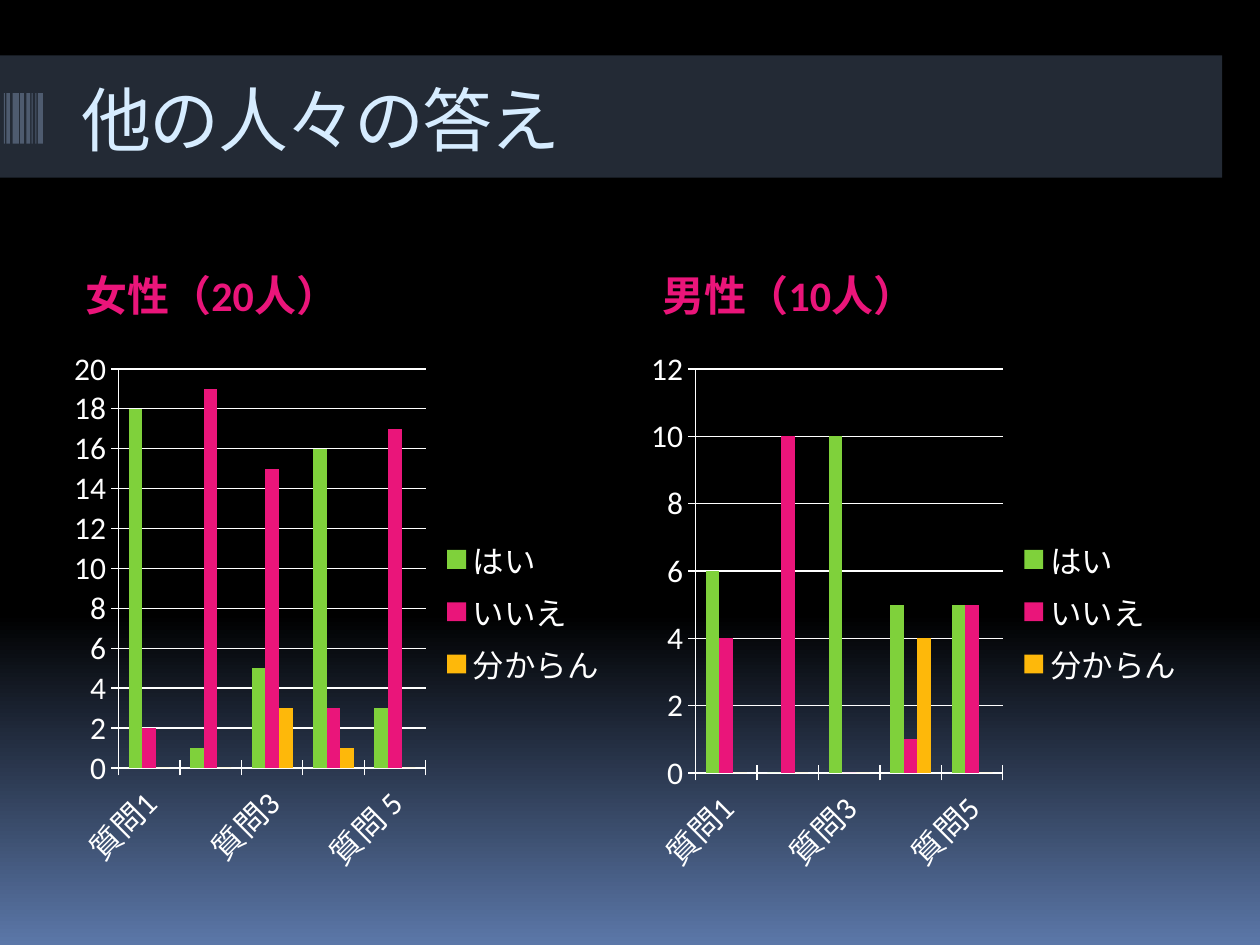
from collections import namedtuple

from lxml import etree
from pptx import Presentation
from pptx.chart.data import CategoryChartData
from pptx.dml.color import RGBColor
from pptx.enum.chart import XL_CHART_TYPE, XL_LEGEND_POSITION, XL_TICK_MARK
from pptx.enum.shapes import MSO_SHAPE
from pptx.enum.text import MSO_ANCHOR
from pptx.oxml.ns import qn
from pptx.util import Inches, Pt

COLUMNS = XL_CHART_TYPE.COLUMN_CLUSTERED
RIGHT = XL_LEGEND_POSITION.RIGHT
CROSS = XL_TICK_MARK.CROSS
RECTANGLE = MSO_SHAPE.RECTANGLE
TOP, MIDDLE = MSO_ANCHOR.TOP, MSO_ANCHOR.MIDDLE

Box = namedtuple("Box", "left top width height")
WIDTH, HEIGHT = 10, 7.5
MARGIN, GUTTER = 0.5, 0.16
COLUMN_WIDTH = (WIDTH - 2 * MARGIN - GUTTER) / 2
PANEL_TOP, PANEL_HEIGHT = 1.98, 5.04
HEADING_HEIGHT = 0.71

WHITE, PINK = "FFFFFF", "EA157A"
STRIPES = [(0.03, 0.01), (0.05, 0.03), (0.1, 0.05), (0.16, 0.03),
           (0.21, 0.03), (0.25, 0.01), (0.28, 0.01), (0.3, 0.04)]
ANSWERS = [("はい", "7FD13B"), ("いいえ", PINK), ("分からん", "FEB80A")]
QUESTIONS = ["質問1", "質問2", "質問3", "質問4"]
PANELS = [
    ("女性（20人）", QUESTIONS + ["質問 5"],
     [(18, 1, 5, 16, 3), (2, 19, 15, 3, 17), (0, 0, 3, 1, 0)]),
    ("男性（10人）", QUESTIONS + ["質問5"],
     [(6, 0, 10, 5, 5), (4, 10, 0, 1, 5), (0, 0, 0, 4, 0)]),
]


def color(value):
    """Turn a hex string into a colour."""
    return RGBColor.from_string(value)


def inches(box):
    """Turn a box in inches into slide lengths."""
    return [Inches(length) for length in box]


def style_font(font, name, size, hex_color, bold=False):
    """Set the face, size, colour and weight of a font."""
    font.name, font.size, font.bold = name, Pt(size), bold
    font.color.rgb = color(hex_color)


def add_background(slide):
    """Fade the background from black to blue at the bottom."""
    fill = slide.background.fill
    fill.gradient()
    fill.gradient_angle = 270
    for stop, position, value in zip(fill.gradient_stops, (0.65, 1), ("000000", "5B77A8")):
        stop.position = position
        stop.color.rgb = color(value)


def add_rectangle(slide, box, hex_color):
    """Add a plain filled rectangle."""
    shape = slide.shapes.add_shape(RECTANGLE, *inches(box))
    shape.shadow.inherit = False
    shape.fill.solid()
    shape.fill.fore_color.rgb = color(hex_color)
    shape.line.fill.background()
    return shape


def add_text(slide, box, text, anchor):
    """Add a wrapped one-paragraph text box and return its paragraph."""
    frame = slide.shapes.add_textbox(*inches(box)).text_frame
    frame.word_wrap = True
    frame.vertical_anchor = anchor
    paragraph = frame.paragraphs[0]
    paragraph.text = text
    return paragraph


def add_title_band(slide, box, title):
    """Add the translucent band with its stripes and the title."""
    band = add_rectangle(slide, box, "586A86")
    fill_color = band.fill._xPr.find(".//" + qn("a:srgbClr"))
    etree.SubElement(fill_color, qn("a:alpha"), val="40000")
    for left, width in STRIPES:
        add_rectangle(slide, Box(box.left + left, box.top + 0.3, width, 0.4), "4E5B6F")
    title_box = Box(box.left + 0.55, box.top + 0.12, 8.5, 1)
    paragraph = add_text(slide, title_box, title, TOP)
    style_font(paragraph.font, "Courier New", 40, "D6ECFF")
    paragraph.runs[0].font._element.set("spc", "-100")


def add_answer_chart(slide, box, categories, counts):
    """Add a clustered column chart of the answers to each question."""
    data = CategoryChartData()
    data.categories = categories
    for (answer, _), values in zip(ANSWERS, counts):
        data.add_series(answer, values)
    chart = slide.shapes.add_chart(COLUMNS, *inches(box), data).chart
    chart.has_title = False
    style_font(chart.font, "Calibri", 18, WHITE)
    chart.has_legend = True
    chart.legend.position = RIGHT
    chart.legend.include_in_layout = False
    plot = chart.plots[0]
    plot.gap_width, plot.vary_by_categories = 150, False
    for series, (_, hex_color) in zip(plot.series, ANSWERS):
        series.format.fill.solid()
        series.format.fill.fore_color.rgb = color(hex_color)
    chart.value_axis.has_major_gridlines = True
    lines = [chart.value_axis.major_gridlines.format.line]
    for axis in (chart.category_axis, chart.value_axis):
        axis.major_tick_mark = CROSS
        lines.append(axis.format.line)
    for line in lines:
        line.color.rgb = color(WHITE)
        line.width = Pt(0.75)


def add_panel(slide, box, heading, categories, counts):
    """Add one group's heading with its chart below."""
    heading_box = box._replace(height=HEADING_HEIGHT)
    paragraph = add_text(slide, heading_box, heading, MIDDLE)
    paragraph.space_before = Pt(7)
    paragraph._p.get_or_add_pPr().set("marL", str(Inches(0.08)))
    style_font(paragraph.font, "Calibri", 24, PINK, bold=True)
    chart_box = box._replace(top=box.top + HEADING_HEIGHT, height=box.height - HEADING_HEIGHT)
    add_answer_chart(slide, chart_box, categories, counts)


def main():
    """Build and save the slide."""
    presentation = Presentation()
    presentation.slide_width, presentation.slide_height = Inches(WIDTH), Inches(HEIGHT)
    slide = presentation.slides.add_slide(presentation.slide_layouts[6])
    add_background(slide)
    add_title_band(slide, Box(0, 0.44, 9.7, 0.97), "他の人々の答え")
    for index, panel in enumerate(PANELS):
        left = MARGIN + index * (COLUMN_WIDTH + GUTTER)
        add_panel(slide, Box(left, PANEL_TOP, COLUMN_WIDTH, PANEL_HEIGHT), *panel)
    presentation.save("out.pptx")


if __name__ == "__main__":
    main()
